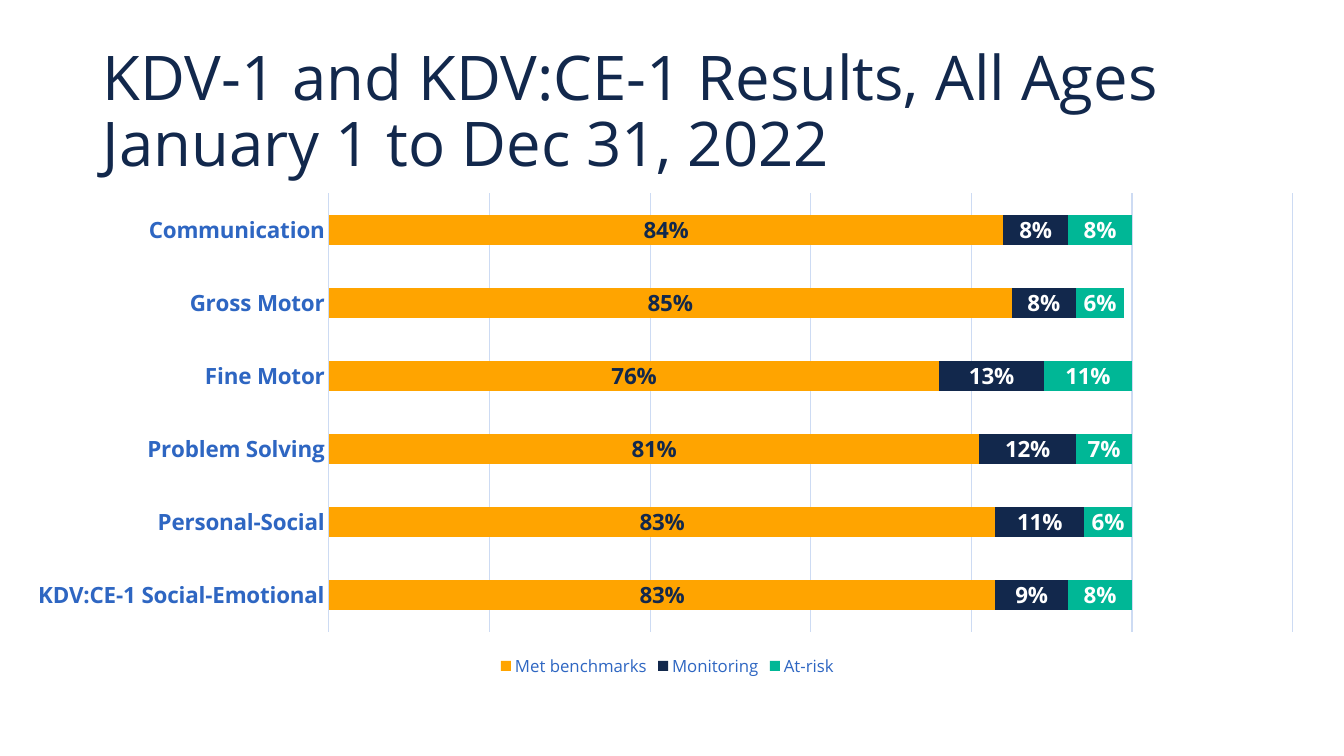
from pptx import Presentation
from pptx.chart.data import CategoryChartData
from pptx.dml.color import RGBColor
from pptx.enum import chart as ch, text
from pptx.oxml import parse_xml
from pptx.oxml.ns import nsdecls
from pptx.util import Inches, Pt

FONT = "Open Sans"
NAVY, BLUE, PALE, WHITE = "12284C", "2E66C2", "CDDBF3", "FFFFFF"
TITLE = "KDV-1 and KDV:CE-1 Results, All Ages\vJanuary 1 to Dec 31, 2022"
DOMAINS = ["KDV:CE-1 Social-Emotional", "Personal-Social", "Problem Solving",
           "Fine Motor", "Gross Motor", "Communication"]
RESULTS = [
    ("Met benchmarks", [0.83, 0.83, 0.81, 0.76, 0.85, 0.84], "FFA400", NAVY),
    ("Monitoring", [0.09, 0.11, 0.12, 0.13, 0.08, 0.08], NAVY, WHITE),
    ("At-risk", [0.08, 0.06, 0.07, 0.11, 0.06, 0.08], "00B796", WHITE),
]
PLOT = {"x": 0.24, "y": 0.02, "w": 0.74, "h": 0.88}


def rgb(color):
    return RGBColor.from_string(color)


def style(font, size, color, bold=False):
    font.name, font.size, font.bold = FONT, Pt(size), bold
    font.color.rgb = rgb(color)


def style_line(line):
    line.color.rgb = rgb(PALE)
    line.width = Pt(0.75)


def add_title(s, value, size, color):
    sp = s.shapes.title
    sp.left, sp.top, sp.width, sp.height = map(Inches, (0.92, 0.4, 11.5, 1.45))
    tf = sp.text_frame
    tf.word_wrap = True
    tf.auto_size = text.MSO_AUTO_SIZE.NONE
    tf.vertical_anchor = text.MSO_ANCHOR.MIDDLE
    p = tf.paragraphs[0]
    p.text = value
    p.alignment = text.PP_ALIGN.LEFT
    p.line_spacing = 0.9
    for r in p.runs:
        style(r.font, size, color)


def place_plot(chart):
    modes = "".join(f'<c:{k}Mode val="edge"/>' for k in "xy")
    sizes = "".join(f'<c:{k} val="{v}"/>' for k, v in PLOT.items())
    layout = parse_xml(
        f'<c:layout {nsdecls("c")}><c:manualLayout><c:layoutTarget val="inner"/>'
        f'{modes}{sizes}</c:manualLayout></c:layout>')
    area = chart._chartSpace.chart.plotArea
    for old in area.findall(layout.tag):
        area.remove(old)
    area.insert(0, layout)


def add_results(s):
    data = CategoryChartData(number_format="0%")
    data.categories = DOMAINS
    for name, values, _, _ in RESULTS:
        data.add_series(name, values)
    box = map(Inches, (0.16, 1.82, 12.92, 4.94))
    chart = s.shapes.add_chart(ch.XL_CHART_TYPE.BAR_STACKED, *box, data).chart
    style(chart.font, 10, NAVY)
    chart.has_title = False
    chart.has_legend = True
    chart.legend.position = ch.XL_LEGEND_POSITION.BOTTOM
    chart.legend.include_in_layout = False
    style(chart.legend.font, 12, BLUE)

    cat = chart.category_axis
    cat.major_tick_mark = cat.minor_tick_mark = ch.XL_TICK_MARK.NONE
    style(cat.tick_labels.font, 16, BLUE, bold=True)
    style_line(cat.format.line)

    val = chart.value_axis
    val.minimum_scale, val.maximum_scale, val.major_unit = 0, 1.2, 0.2
    val.has_major_gridlines = True
    style_line(val.major_gridlines.format.line)
    val.tick_labels.number_format = "0%"
    val.tick_labels.number_format_is_linked = False
    val.visible = False

    plot = chart.plots[0]
    plot.gap_width, plot.overlap, plot.vary_by_categories = 150, 100, False
    for series, (_, _, fill, ink) in zip(plot.series, RESULTS):
        series.format.fill.solid()
        series.format.fill.fore_color.rgb = rgb(fill)
        labels = series.data_labels
        labels.show_value = True
        labels.position = ch.XL_LABEL_POSITION.CENTER
        labels.number_format = "0%"
        labels.number_format_is_linked = False
        style(labels.font, 16, ink, bold=True)
    place_plot(chart)


def main():
    prs = Presentation()
    prs.slide_width, prs.slide_height = Inches(13.33), Inches(7.5)
    s = prs.slides.add_slide(prs.slide_layouts[5])
    add_title(s, TITLE, 44, NAVY)
    add_results(s)
    prs.save("out.pptx")


if __name__ == "__main__":
    main()
